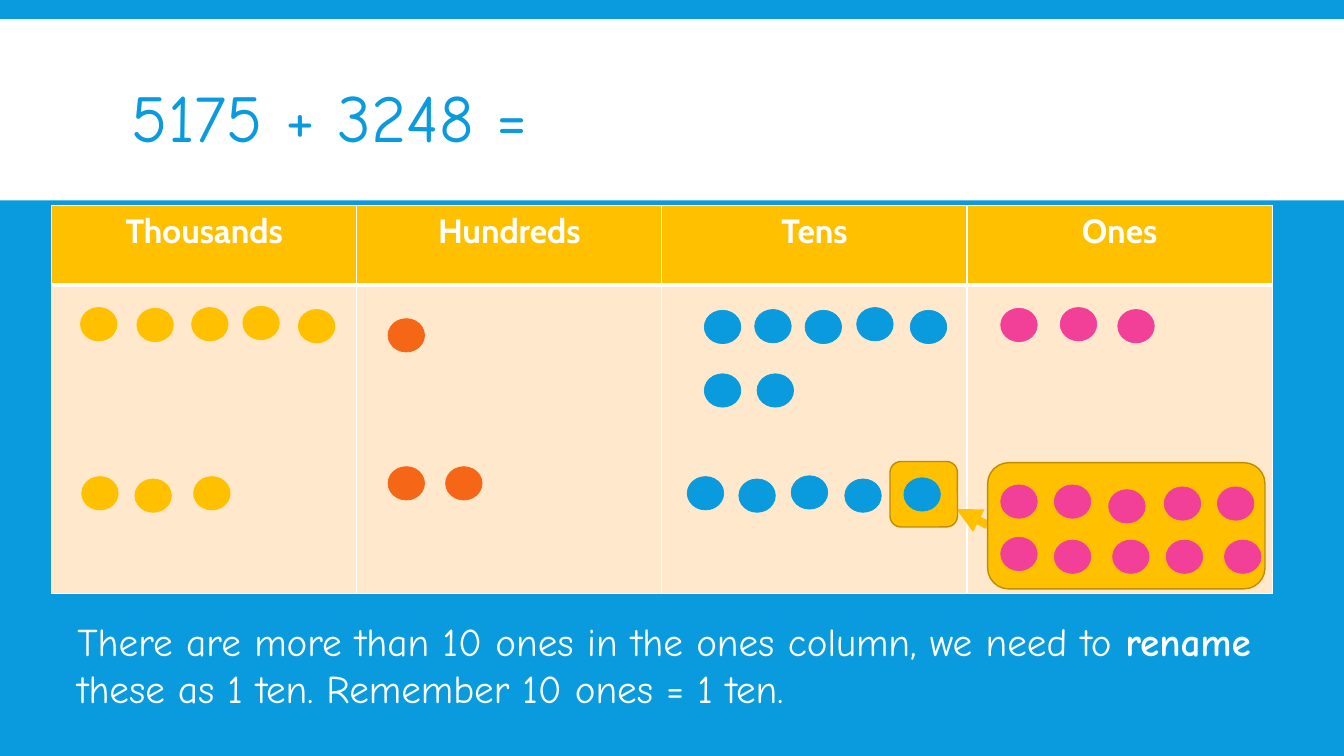
from pptx import Presentation
from pptx.dml.color import RGBColor
from pptx.enum.shapes import MSO_CONNECTOR, MSO_SHAPE
from pptx.enum.text import MSO_ANCHOR, PP_ALIGN
from pptx.oxml import parse_xml
from pptx.oxml.ns import nsdecls
from pptx.util import Cm, Pt

BLUE, WHITE, GOLD = "099BDD", "FFFFFF", "FFC000"
ORANGE, PINK, CREAM, DARK_GOLD = "F56617", "F24099", "FFE8CC", "BD8E00"
HAND, HEADING = "Comic Neue", "Cabin"
TITLE_ONLY = 5

# Counter colour, then (left, top) of each counter in centimetres
COUNTERS = [
    (GOLD, [(2.03, 7.75), (3.45, 7.77), (4.83, 7.75), (6.12, 7.72), (7.52, 7.8),
            (2.06, 12.01), (3.4, 12.07), (4.88, 12.01)]),
    (ORANGE, [(9.78, 8.03), (9.78, 11.76), (11.23, 11.76)]),
    (BLUE, [(17.75, 7.82), (19.02, 7.8), (20.29, 7.82), (21.59, 7.75), (22.94, 7.82),
            (17.75, 9.42), (19.08, 9.42),
            (17.32, 12.01), (18.62, 12.07), (19.94, 11.99), (21.29, 12.07),
            (22.78, 12.04)]),
    (PINK, [(25.22, 7.77), (26.72, 7.75), (28.17, 7.8),
            (25.22, 12.22), (26.57, 12.22), (27.94, 12.34), (29.34, 12.27),
            (30.68, 12.27),
            (25.22, 13.54), (26.57, 13.61), (28.04, 13.61), (29.39, 13.61),
            (30.86, 13.61)]),
]


def color(hex_string):
    return RGBColor.from_string(hex_string)


def write(paragraph, text, size, font=HAND, fill=WHITE, bold=False, align=PP_ALIGN.LEFT):
    """Append a formatted run to the paragraph."""
    paragraph.alignment = align
    run = paragraph.add_run()
    run.text = text
    run.font.name = font
    run.font.size = Pt(size)
    run.font.bold = bold
    run.font.color.rgb = color(fill)


def add_block(slide, kind, left, top, width, height, fill, line=None, weight=1):
    shape = slide.shapes.add_shape(kind, Cm(left), Cm(top), Cm(width), Cm(height))
    shape.shadow.inherit = False
    shape.fill.solid()
    shape.fill.fore_color.rgb = color(fill)
    if line:
        shape.line.color.rgb = color(line)
        shape.line.width = Pt(weight)
    else:
        shape.line.fill.background()
    return shape


def add_title(slide, text):
    """Fill the title placeholder and lay the white band behind it."""
    title = slide.shapes.title
    title.left, title.top, title.width, title.height = Cm(3.07), Cm(0.99), Cm(27.18), Cm(4.19)
    title.text_frame.vertical_anchor = MSO_ANCHOR.MIDDLE
    paragraph = title.text_frame.paragraphs[0]
    paragraph.line_spacing = 0.85
    write(paragraph, text, 48, fill=BLUE)
    band = add_block(slide, MSO_SHAPE.RECTANGLE, 0, 0.48, 33.87, 4.57, WHITE)
    title.element.addprevious(band.element)


def format_cell(cell, fill, top=1, bottom=1):
    """Set the cell's fill and white borders, with widths in points."""
    properties = cell._tc.get_or_add_tcPr()
    for side, weight in (("L", 1), ("R", 1), ("T", top), ("B", bottom)):
        properties.append(parse_xml(
            f'<a:ln{side} {nsdecls("a")} w="{Pt(weight)}"><a:solidFill>'
            f'<a:srgbClr val="{WHITE}"/></a:solidFill></a:ln{side}>'))
    cell.fill.solid()
    cell.fill.fore_color.rgb = color(fill)


def add_place_value_table(slide, headings):
    table = slide.shapes.add_table(
        2, len(headings), Cm(1.3), Cm(5.18), Cm(30.76), Cm(9.78)).table
    table.rows[0].height, table.rows[1].height = Cm(2.01), Cm(7.77)
    for column, heading in enumerate(headings):
        header, body = table.cell(0, column), table.cell(1, column)
        format_cell(header, GOLD, bottom=3)
        format_cell(body, CREAM, top=3)
        write(header.text_frame.paragraphs[0], heading, 24, font=HEADING,
              bold=True, align=PP_ALIGN.CENTER)


def add_arrow(slide, start, end):
    connector = slide.shapes.add_connector(
        MSO_CONNECTOR.STRAIGHT, *(Cm(value) for value in start + end))
    connector.line.color.rgb = color(GOLD)
    connector.line.width = Pt(6)
    connector.line._get_or_add_ln().append(
        parse_xml(f'<a:tailEnd {nsdecls("a")} type="triangle"/>'))
    connector.element.spPr.append(parse_xml(f'<a:effectLst {nsdecls("a")}/>'))


def add_explanation(slide):
    box = slide.shapes.add_textbox(Cm(1.7), Cm(15.44), Cm(30.07), Cm(2.64))
    box.text_frame.word_wrap = True
    paragraph = box.text_frame.paragraphs[0]
    for text, bold in (
            ("There are more than 10 ones in the ones column, we need to ", False),
            ("rename ", True),
            ("these as 1 ten. Remember 10 ones = 1 ten.", False)):
        write(paragraph, text, 28, bold=bold, align=PP_ALIGN.JUSTIFY)


def main():
    presentation = Presentation()
    presentation.slide_width, presentation.slide_height = Cm(33.87), Cm(19.05)
    slide = presentation.slides.add_slide(presentation.slide_layouts[TITLE_ONLY])
    slide.background.fill.solid()
    slide.background.fill.fore_color.rgb = color(BLUE)

    add_title(slide, "5175 + 3248 =")
    add_place_value_table(slide, ["Thousands", "Hundreds", "Tens", "Ones"])
    add_explanation(slide)
    add_arrow(slide, (24.89, 13.23), (24.1, 12.83))
    for frame in ((24.89, 11.66, 6.99, 3.18), (22.43, 11.63, 1.7, 1.65)):
        add_block(slide, MSO_SHAPE.ROUNDED_RECTANGLE, *frame, GOLD, DARK_GOLD)
    for fill, positions in COUNTERS:
        for left, top in positions:
            add_block(slide, MSO_SHAPE.OVAL, left, top, 0.92, 0.84, fill, fill, 0.5)

    presentation.save("out.pptx")


if __name__ == "__main__":
    main()
